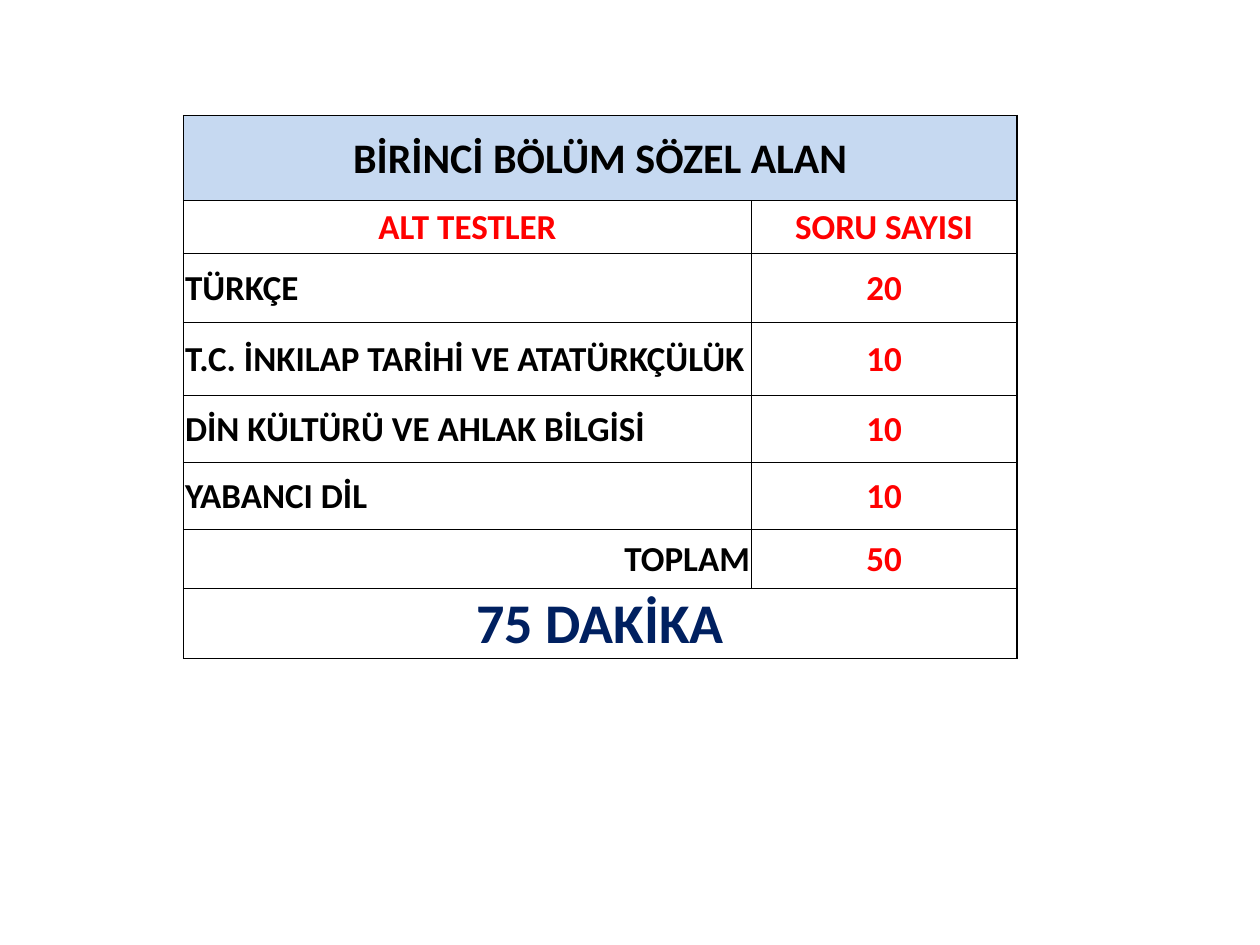
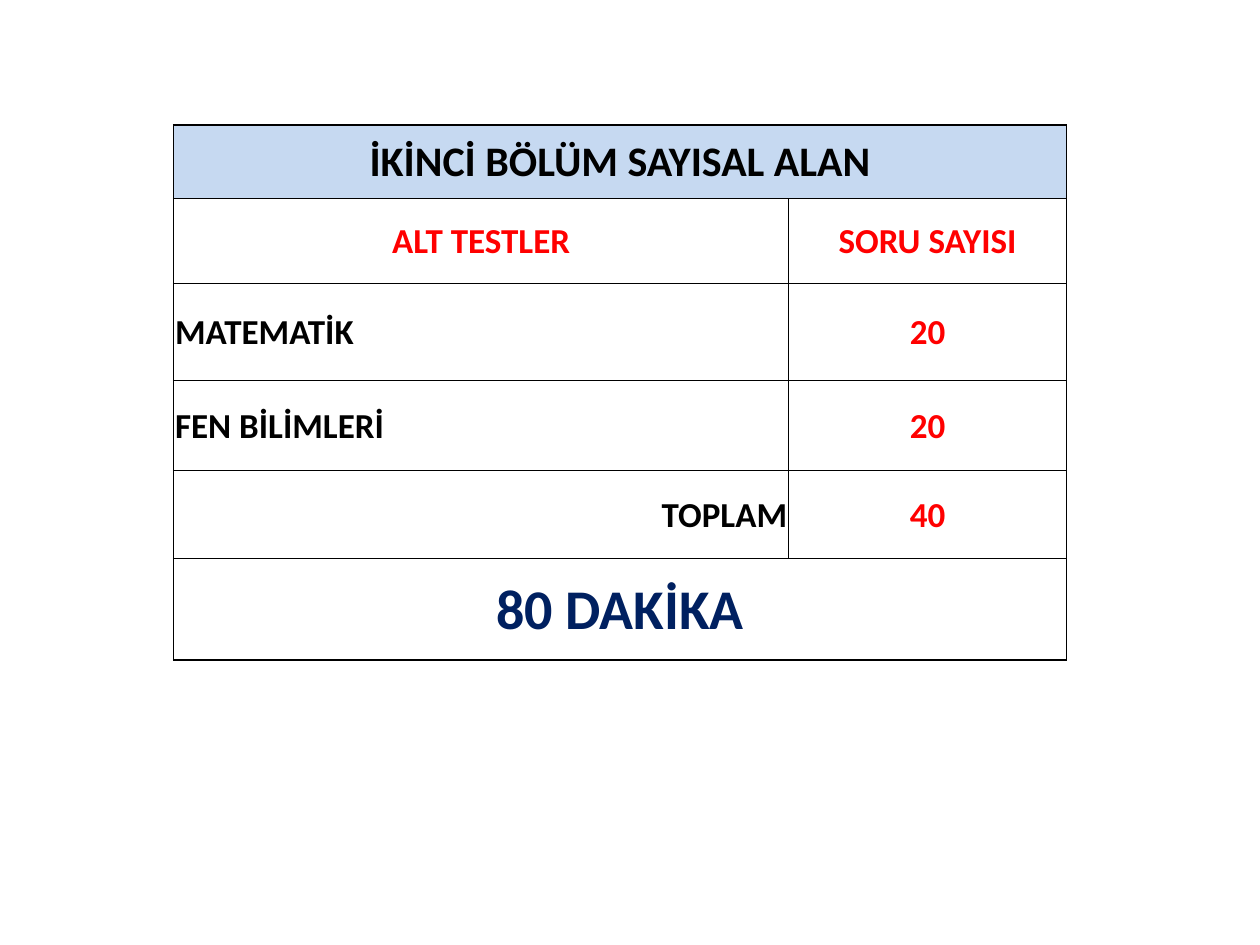
from lxml import etree
from pptx import Presentation
from pptx import util as u
from pptx.dml.color import RGBColor
from pptx.enum import text
from pptx.oxml.ns import qn

BLACK, RED, NAVY, PALE = "000000", "FF0000", "002060", "C6D9F1"
LEFT, MID, RIGHT = text.PP_ALIGN.LEFT, text.PP_ALIGN.CENTER, text.PP_ALIGN.RIGHT


def paint(color, code):
    color.rgb = RGBColor.from_string(code)


def edge(cell, side, width):
    line = etree.SubElement(cell._tc.get_or_add_tcPr(), qn("a:ln" + side),
                            w=str(u.Pt(width)), cmpd="sng")
    fill = etree.SubElement(line, qn("a:solidFill"))
    etree.SubElement(fill, qn("a:srgbClr"), val=BLACK)


# Content and size of each exam section, in centimetres
parts = [
    {"name": "BİRİNCİ BÖLÜM SÖZEL ALAN", "time": "75 DAKİKA", "total": "50",
     "tests": [("TÜRKÇE", "20"), ("T.C. İNKILAP TARİHİ VE ATATÜRKÇÜLÜK", "10"),
               ("DİN KÜLTÜRÜ VE AHLAK BİLGİSİ", "10"), ("YABANCI DİL", "10")],
     "spot": (3.7, 2.33), "cols": (11.45, 5.35),
     "rows": (1.71, 1.07, 1.39, 1.47, 1.35, 1.35, 1.19, 1.27)},
    {"name": "İKİNCİ BÖLÜM SAYISAL ALAN", "time": "80 DAKİKA", "total": "40",
     "tests": [("MATEMATİK", "20"), ("FEN BİLİMLERİ", "20")],
     "spot": (3.5, 2.52), "cols": (12.4, 5.6),
     "rows": (1.48, 1.72, 1.94, 1.83, 1.77, 2.05)},
]

# Cell format shared by both tables
inset = {"margin_left": u.Cm(0.03), "margin_right": u.Cm(0.03),
         "margin_top": u.Cm(0.03), "margin_bottom": 0,
         "vertical_anchor": text.MSO_ANCHOR.MIDDLE}
plain = {"first_row": False, "horz_banding": False}

deck = Presentation()
deck.slide_width, deck.slide_height = u.Cm(25.4), u.Cm(19.05)

for part in parts:
    slide = deck.slides.add_slide(deck.slide_layouts[6])

    # Rows of (words, size, colour, alignment)
    grid = [[(part["name"], 24, BLACK, MID)],
            [("ALT TESTLER", 20, RED, MID), ("SORU SAYISI", 20, RED, MID)]]
    for test, count in part["tests"]:
        grid.append([(test, 20, BLACK, LEFT), (count, 20, RED, MID)])
    grid.append([("TOPLAM", 20, BLACK, RIGHT), (part["total"], 20, RED, MID)])
    grid.append([(part["time"], 32, NAVY, MID)])
    last = len(grid) - 1

    # Table frame
    x, y = part["spot"]
    table = slide.shapes.add_table(
        len(grid), 2, u.Cm(x), u.Cm(y),
        u.Cm(sum(part["cols"])), u.Cm(sum(part["rows"]))).table
    for key, value in plain.items():
        setattr(table, key, value)
    for col, width in zip(table.columns, part["cols"]):
        col.width = u.Cm(width)
    for row, height in zip(table.rows, part["rows"]):
        row.height = u.Cm(height)

    for r, row in enumerate(grid):
        wide = len(row) == 1
        if wide:
            table.cell(r, 0).merge(table.cell(r, 1))

        # Heavy outline and closing row, thin rules within
        for c in range(2):
            cell = table.cell(r, c)
            edge(cell, "L", 1 if c == 0 or wide else 0.5)
            edge(cell, "R", 1 if c == 1 or wide else 0.5)
            edge(cell, "T", 1 if r in (0, last) else 0.5)
            edge(cell, "B", 1 if r >= last - 1 else 0.5)
            if r == 0:
                cell.fill.solid()
                paint(cell.fill.fore_color, PALE)
            else:
                cell.fill.background()

        # Words
        for c, (words, size, code, align) in enumerate(row):
            cell = table.cell(r, c)
            for key, value in inset.items():
                setattr(cell, key, value)
            para = cell.text_frame.paragraphs[0]
            para.alignment = align
            run = para.add_run()
            run.text = words
            for key, value in {"name": "Calibri", "size": u.Pt(size), "bold": True}.items():
                setattr(run.font, key, value)
            paint(run.font.color, code)

deck.save("out.pptx")
